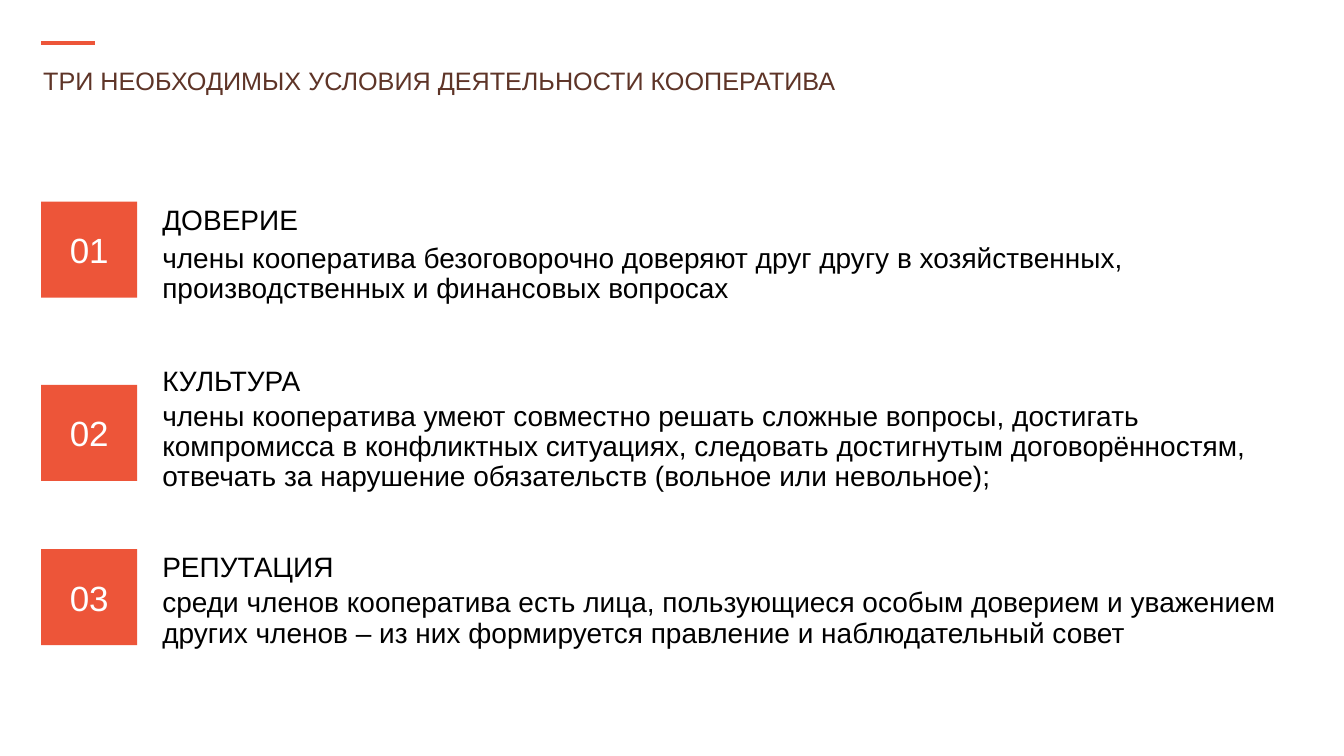
from lxml.etree import SubElement
from pptx import Presentation
from pptx.dml.color import RGBColor
from pptx.enum.shapes import MSO_CONNECTOR, MSO_SHAPE
from pptx.enum.text import MSO_ANCHOR, PP_ALIGN
from pptx.oxml.ns import qn
from pptx.util import Cm, Pt

ORANGE, BROWN, BLACK, WHITE = "ED5539", "5E3427", "000000", "FFFFFF"
FONT = "Arial"
LEFT = 1.04
TEXT_LEFT = 3.84
BADGE = 2.42

# Number, badge top, heading top, description top, description width, texts
CONDITIONS = [
    ("01", 5.08, 5.08, 6.02, 25.1, "ДОВЕРИЕ",
     "члены кооператива безоговорочно доверяют друг другу в хозяйственных, "
     "производственных и финансовых вопросах"),
    ("02", 9.7, 9.12, 10.01, 29.36, "КУЛЬТУРА",
     "члены кооператива умеют совместно решать сложные вопросы, достигать "
     "компромисса в конфликтных ситуациях, следовать достигнутым "
     "договорённостям, отвечать за нарушение обязательств "
     "(вольное или невольное);"),
    ("03", 13.84, 13.82, 14.71, 29.36, "РЕПУТАЦИЯ",
     "среди членов кооператива есть лица, пользующиеся особым доверием и "
     "уважением других членов – из них формируется правление и "
     "наблюдательный совет"),
]


def rgb(color):
    return RGBColor.from_string(color)


def add_run(p, text, size, color):
    r = p.add_run()
    r.text = text
    r.font.name = FONT
    r.font.size = Pt(size)
    r.font.color.rgb = rgb(color)


def add_text(s, x, y, w, h, text, size, color, spacing=1.0):
    tf = s.shapes.add_textbox(Cm(x), Cm(y), Cm(w), Cm(h)).text_frame
    tf.word_wrap = True
    p = tf.paragraphs[0]
    p.line_spacing = spacing
    add_run(p, text, size, color)


def add_accent(s, x, y, w):
    line = s.shapes.add_connector(MSO_CONNECTOR.STRAIGHT,
                                  Cm(x), Cm(y), Cm(x + w), Cm(y))
    line.line.color.rgb = rgb(ORANGE)
    line.line.width = Pt(3)
    SubElement(line._element.spPr, qn("a:effectLst"))


def add_badge(s, y, number):
    sp = s.shapes.add_shape(MSO_SHAPE.RECTANGLE,
                            Cm(LEFT), Cm(y), Cm(BADGE), Cm(BADGE))
    sp.shadow.inherit = False
    sp.fill.solid()
    sp.fill.fore_color.rgb = rgb(ORANGE)
    sp.line.fill.background()
    tf = sp.text_frame
    tf.vertical_anchor = MSO_ANCHOR.MIDDLE
    p = tf.paragraphs[0]
    p.alignment = PP_ALIGN.CENTER
    add_run(p, number, 25, WHITE)


def main():
    prs = Presentation()
    prs.slide_width, prs.slide_height = Cm(33.87), Cm(19.05)
    s = prs.slides.add_slide(prs.slide_layouts[6])

    # Title with accent line
    add_accent(s, LEFT, 1.09, 1.36)
    add_text(s, 0.84, 1.52, 25.55, 0.81,
             "ТРИ НЕОБХОДИМЫХ УСЛОВИЯ ДЕЯТЕЛЬНОСТИ КООПЕРАТИВА", 18, BROWN)

    # Numbered conditions
    for number, badge_y, head_y, body_y, body_w, heading, body in CONDITIONS:
        add_text(s, TEXT_LEFT, head_y, 15.98, 0.81, heading, 20, BLACK, 0.9)
        add_text(s, TEXT_LEFT, body_y, body_w, 1.75, body, 20, BLACK, 0.9)
        add_badge(s, badge_y, number)

    prs.save("out.pptx")


if __name__ == "__main__":
    main()
